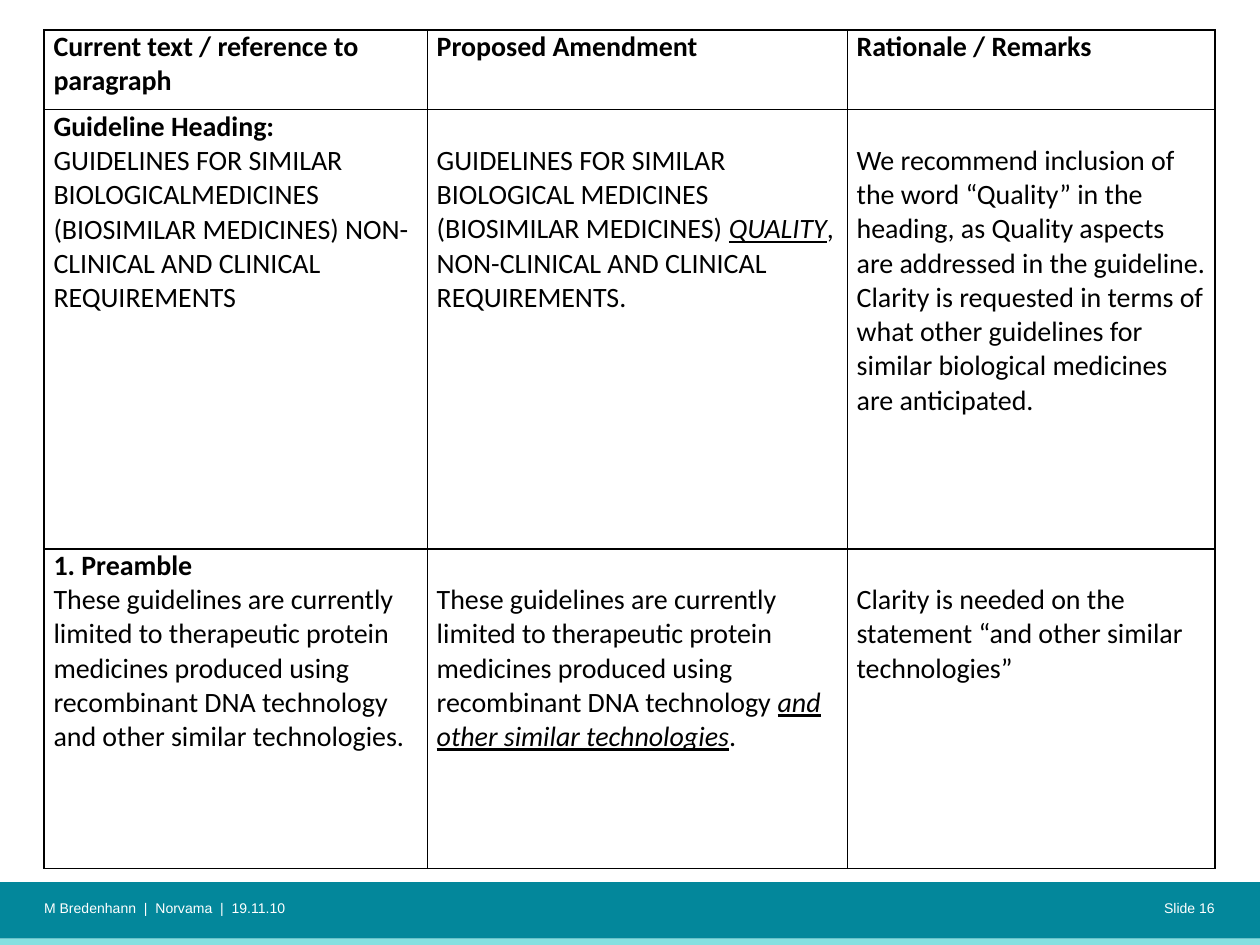
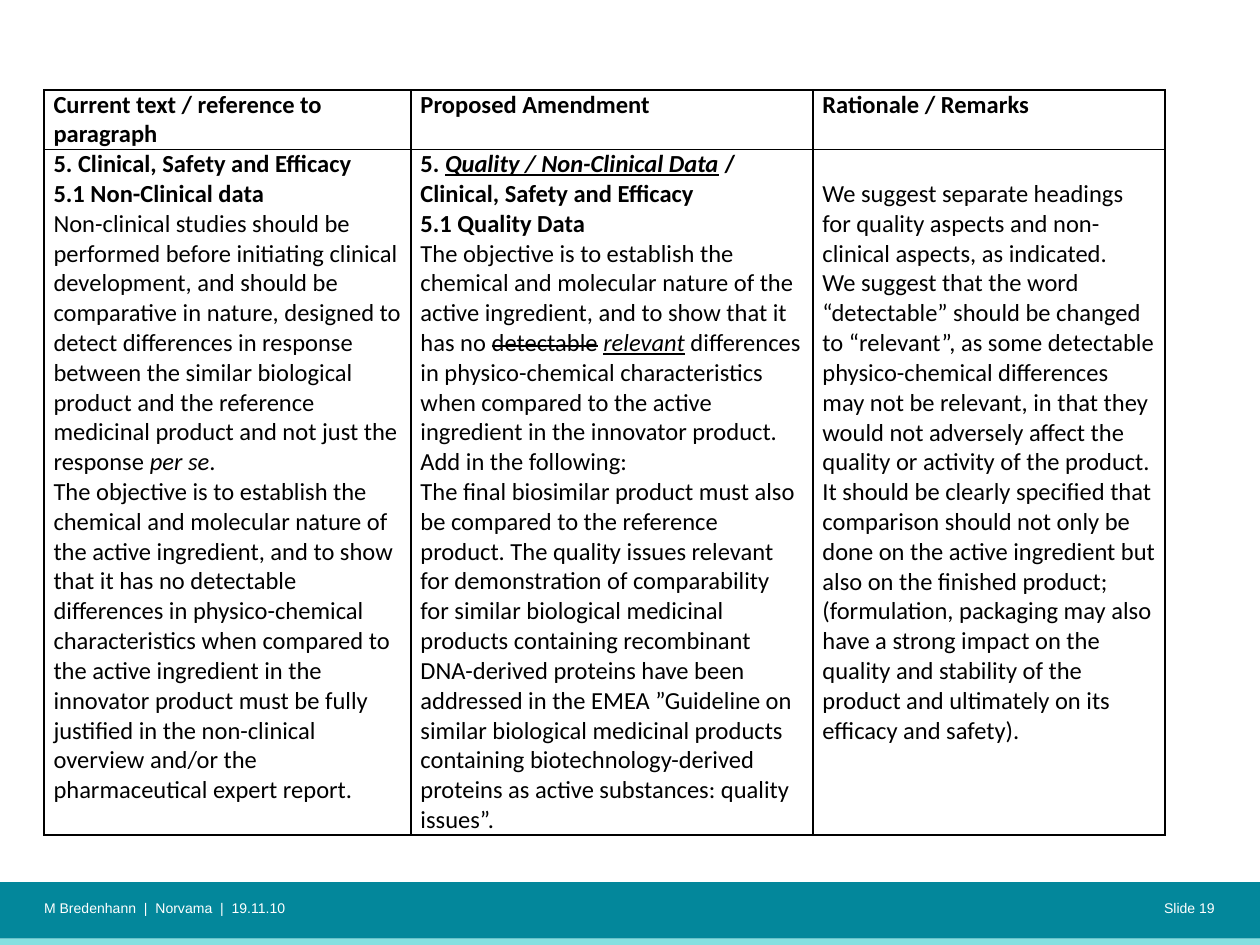
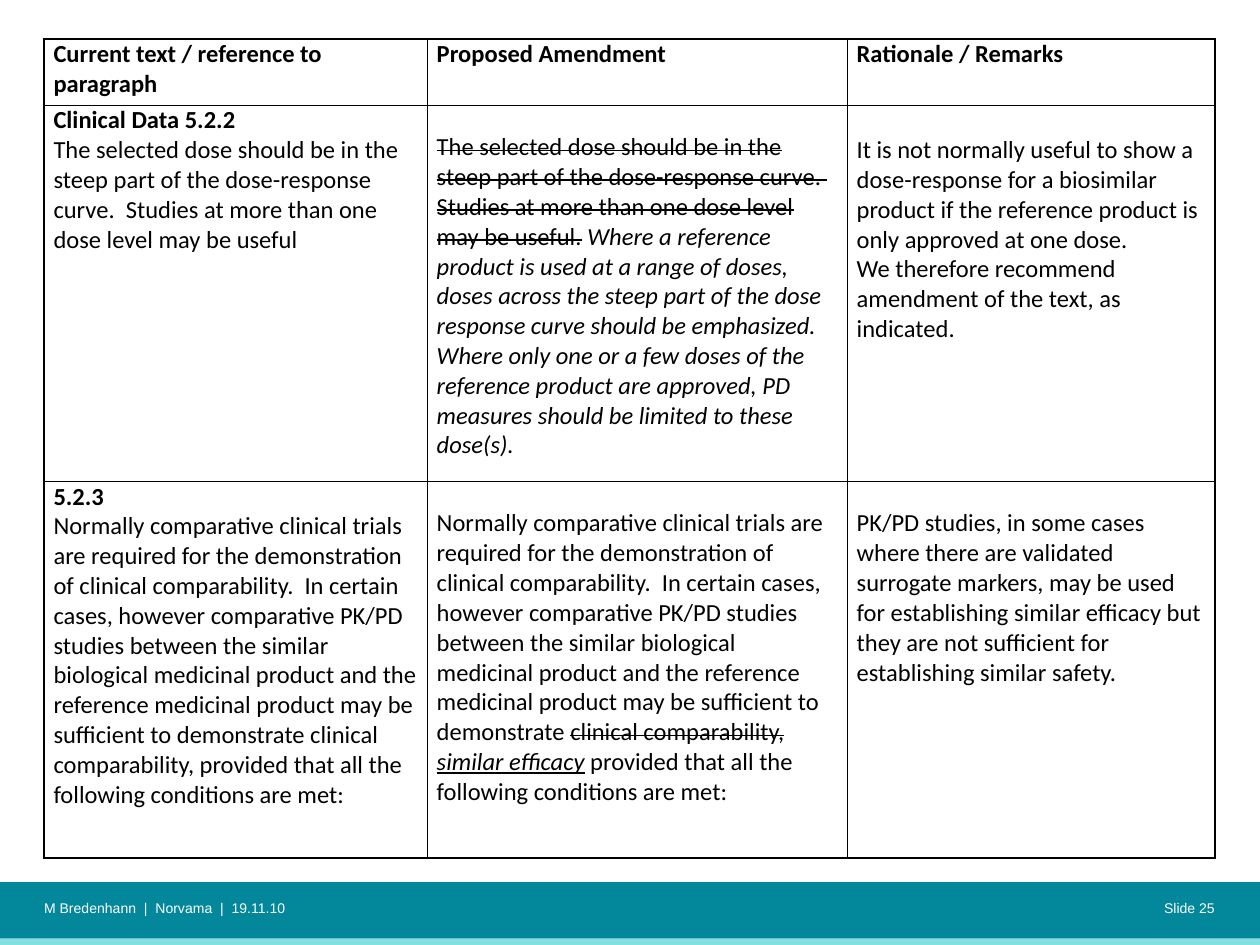
from lxml import etree
from pptx import Presentation
from pptx.dml.color import RGBColor
from pptx.enum import shapes, text
from pptx.oxml import ns
from pptx.util import Pt

COLORS = {"band": "03879B", "strip": "85E0E0", "footer": "FFFFFF", "ink": "000000"}
LEFT = 25.2
FOOTER = "M Bredenhann  |  Norvama  |  19.11.10"
HEADINGS = ["Current text / reference to paragraph", "Proposed Amendment", "Rationale / Remarks"]
FULL_WIDTHS = [219, 240, 210]

TABLES = [
    {
        "number": 16, "top": 17, "size": 16, "widths": FULL_WIDTHS, "heights": [45.7, 250.9, 182.7],
        "rows": [
            [
                (0, [
                    [("Guideline Heading:", "b")],
                    [("GUIDELINES FOR SIMILAR BIOLOGICALMEDICINES (BIOSIMILAR MEDICINES) NON-CLINICAL AND CLINICAL REQUIREMENTS", "")],
                ]),
                (19.5, [
                    [("GUIDELINES FOR SIMILAR BIOLOGICAL MEDICINES (BIOSIMILAR MEDICINES) ", ""),
                     ("QUALITY", "iu"),
                     (", NON-CLINICAL AND CLINICAL REQUIREMENTS.", "")],
                ]),
                (19.5, [
                    [("We recommend inclusion of the word “Quality” in the heading, as Quality aspects are addressed in the guideline.", "")],
                    [("Clarity is requested in terms of what other guidelines for similar biological medicines are anticipated.", "")],
                ]),
            ],
            [
                (0, [
                    [("1. Preamble", "b")],
                    [("These guidelines are currently limited to therapeutic protein medicines produced using recombinant DNA technology and other similar technologies.", "")],
                ]),
                (19.5, [
                    [("These guidelines are currently limited to therapeutic protein medicines produced using recombinant DNA technology ", ""),
                     ("and other similar technologies", "iu"),
                     (".", "")],
                ]),
                (19.5, [
                    [("Clarity is needed on the statement “and other similar technologies”", "")],
                ]),
            ],
        ],
    },
    {
        "number": 19, "top": 51.3, "size": 14, "widths": [209.7, 229.7, 201.2], "heights": [34, 392],
        "rows": [
            [
                (0, [
                    [("5. Clinical, Safety and Efficacy", "b")],
                    [("5.1 Non-Clinical data", "b")],
                    [("Non-clinical studies should be performed before initiating clinical development, and should be comparative in nature, designed to detect differences in response between the similar biological product and the reference medicinal product and not just the response ", ""),
                     ("per se", "i"),
                     (".", "")],
                    [("The objective is to establish the chemical and molecular nature of the active ingredient, and to show that it has no detectable differences in physico-chemical characteristics when compared to the active ingredient in the innovator product must be fully justified in the non-clinical overview and/or the pharmaceutical expert report.", "")],
                ]),
                (0, [
                    [("5. ", "b"),
                     ("Quality / Non-Clinical Data", "biu"),
                     (" / Clinical, Safety and Efficacy", "b")],
                    [("5.1 Quality Data", "b")],
                    [("The objective is to establish the chemical and molecular nature of the active ingredient, and to show that it has no ", ""),
                     ("detectable", "s"),
                     (" ", ""),
                     ("relevant", "iu"),
                     (" differences in physico-chemical characteristics when compared to the active ingredient in the innovator product.", "")],
                    [("Add in the following:", "")],
                    [("The final biosimilar product must also be compared to the reference product. The quality issues relevant for demonstration of comparability for similar biological medicinal products containing recombinant DNA-derived proteins have been addressed in the EMEA ”Guideline on similar biological medicinal products containing biotechnology-derived proteins as active substances: quality issues”.", "")],
                ]),
                (17.1, [
                    [("We suggest separate headings for quality aspects and non-clinical aspects, as indicated.", "")],
                    [("We suggest that the word “detectable” should be changed to “relevant”, as some detectable physico-chemical differences may not be relevant, in that they would not adversely affect the quality or activity of the product.", "")],
                    [("It should be clearly specified that comparison should not only be done on the active ingredient but also on the finished product; (formulation, packaging may also have a strong impact on the quality and stability of the product and ultimately on its efficacy and safety).", "")],
                ]),
            ],
        ],
    },
    {
        "number": 25, "top": 22.3, "size": 14, "widths": FULL_WIDTHS, "heights": [38, 215, 215],
        "rows": [
            [
                (0, [
                    [("Clinical Data 5.2.2", "b")],
                    [("The selected dose should be in the steep part of the dose-response curve.  Studies at more than one dose level may be useful", "")],
                ]),
                (15.4, [
                    [("The selected dose should be in the steep part of the dose-response curve.  Studies at more than one dose level may be useful.", "s"),
                     (" ", ""),
                     ("Where a reference product is used at a range of doses, doses across the steep part of the dose response curve should be emphasized.  Where only one or a few doses of the reference product are approved, PD measures should be limited to these dose(s).", "i")],
                ]),
                (17.1, [
                    [("It is not normally useful to show a dose-response for a biosimilar product if the reference product is only approved at one dose.", "")],
                    [("We therefore recommend amendment of the text, as indicated.", "")],
                ]),
            ],
            [
                (0, [
                    [("5.2.3", "b")],
                    [("Normally comparative clinical trials are required for the demonstration of clinical comparability.  In certain cases, however comparative PK/PD studies between the similar biological medicinal product and the reference medicinal product may be sufficient to demonstrate clinical comparability, provided that all the following conditions are met:", "")],
                ]),
                (15.4, [
                    [("Normally comparative clinical trials are required for the demonstration of clinical comparability.  In certain cases, however comparative PK/PD studies between the similar biological medicinal product and the reference medicinal product may be sufficient to demonstrate ", ""),
                     ("clinical comparability,", "s"),
                     (" ", ""),
                     ("similar efficacy", "iu"),
                     (" provided that all the following conditions are met:", "")],
                ]),
                (15.4, [
                    [("PK/PD studies, in some cases where there are validated surrogate markers, may be used for establishing similar efficacy but they are not sufficient for establishing similar safety.", "")],
                ]),
            ],
        ],
    },
]


def add_span(para, words, font, size, color, style=""):
    span = para.add_run()
    span.text = words
    span.font.name = font
    span.font.size = Pt(size)
    span.font.color.rgb = RGBColor.from_string(COLORS[color])
    span.font.bold = "b" in style
    span.font.italic = "i" in style
    span.font.underline = "u" in style
    if "s" in style:
        span.font._element.set("strike", "sngStrike")


def frame_cell(cell):
    properties = cell._tc.get_or_add_tcPr()
    for side in ("L", "R", "T", "B"):
        line = etree.SubElement(properties, ns.qn(f"a:ln{side}"), w=str(Pt(1)))
        fill = etree.SubElement(line, ns.qn("a:solidFill"))
        etree.SubElement(fill, ns.qn("a:srgbClr"), val=COLORS["ink"])
    cell.fill.background()


deck = Presentation()
deck.slide_width, deck.slide_height = Pt(720), Pt(540)
layout = deck.slide_layouts[6]
pages = [deck.slides.add_slide(layout) for table in TABLES]

for color, top, height in [("band", 504, 32.4), ("strip", 536.4, 3.6)]:
    band = pages[0].shapes.add_shape(shapes.MSO_SHAPE.RECTANGLE, 0, Pt(top), deck.slide_width, Pt(height))
    band.shadow.inherit = False
    band.fill.solid()
    band.fill.fore_color.rgb = RGBColor.from_string(COLORS[color])
    band.line.fill.background()
    deck.slide_master.shapes.element.append(band.element)

for page, content in zip(pages, TABLES):
    for words, left, width, align in [
        (f"Slide {content['number']}", 618.6, 75.6, text.PP_ALIGN.RIGHT),
        (FOOTER, LEFT, 559.4, text.PP_ALIGN.LEFT),
    ]:
        box = page.shapes.add_textbox(Pt(left), Pt(514), Pt(width), Pt(15))
        frame = box.text_frame
        frame.word_wrap = True
        frame.margin_left = frame.margin_right = frame.margin_top = frame.margin_bottom = 0
        para = frame.paragraphs[0]
        para.alignment = align
        add_span(para, words, "Arial", 8, "footer")

    rows = [[(0, [[(heading, "b")]]) for heading in HEADINGS]] + content["rows"]
    widths, heights = content["widths"], content["heights"]
    table = page.shapes.add_table(
        len(rows), len(widths), Pt(LEFT), Pt(content["top"]), Pt(sum(widths)), Pt(sum(heights))
    ).table
    table.first_row = table.horz_banding = False
    for column, width in zip(table.columns, widths):
        column.width = Pt(width)
    for row, height, cells in zip(table.rows, heights, rows):
        row.height = Pt(height)
        for cell, (lead, paragraphs) in zip(row.cells, cells):
            cell.margin_left = cell.margin_right = Pt(5.4)
            cell.margin_top, cell.margin_bottom = Pt(lead), 0
            frame_cell(cell)
            for index, spans in enumerate(paragraphs):
                para = cell.text_frame.add_paragraph() if index else cell.text_frame.paragraphs[0]
                for words, style in spans:
                    add_span(para, words, "Calibri", content["size"], "ink", style)

deck.save("out.pptx")
